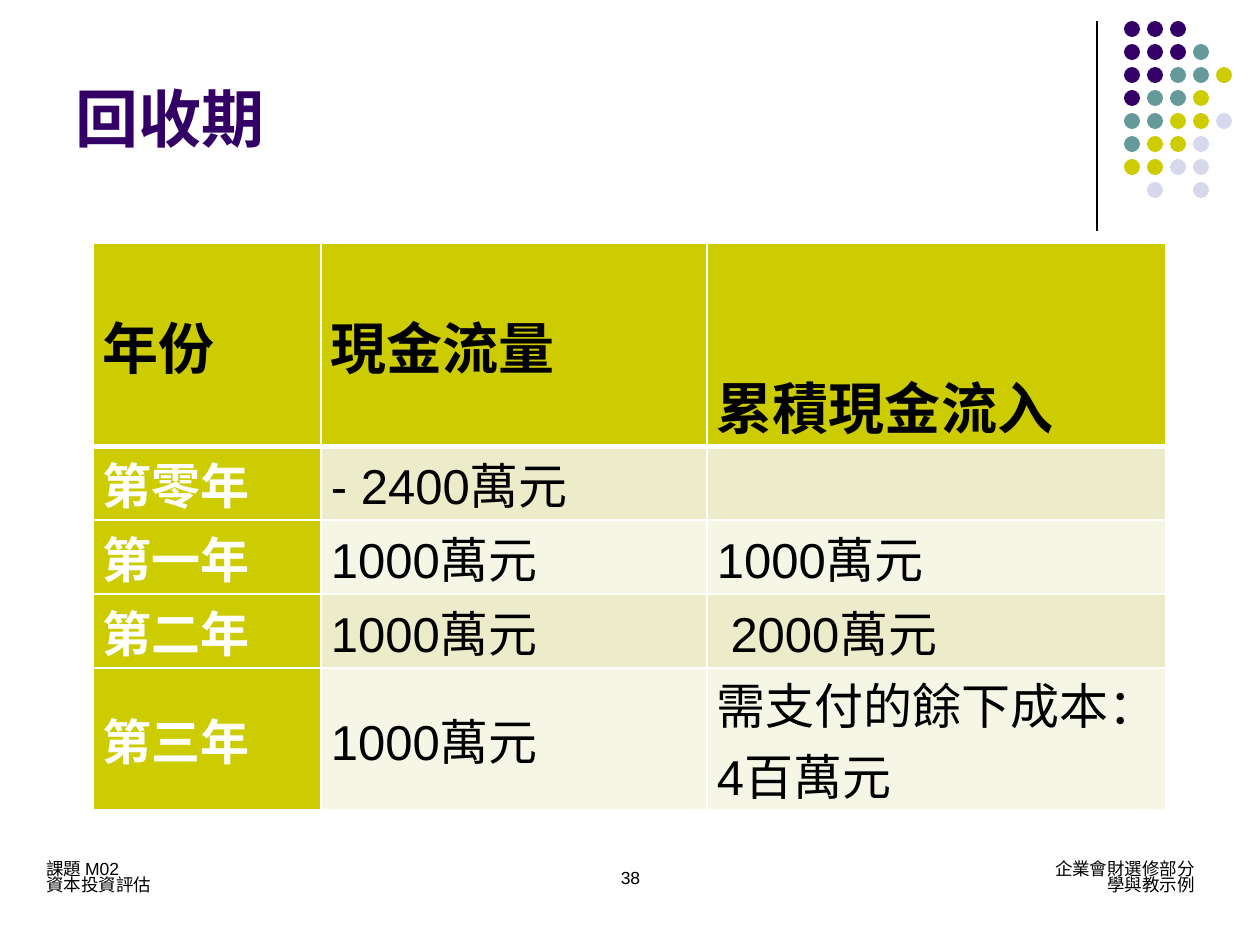
from dataclasses import dataclass

from lxml.etree import SubElement
from pptx import Presentation
from pptx.dml.color import RGBColor
from pptx.enum.shapes import MSO_CONNECTOR, MSO_SHAPE
from pptx.enum.text import MSO_ANCHOR, PP_ALIGN
from pptx.oxml.ns import qn
from pptx.util import Pt


@dataclass(frozen=True)
class Theme:
    font: str = "Arial"
    black: str = "000000"
    white: str = "FFFFFF"
    purple: str = "330066"
    teal: str = "669999"
    olive: str = "CCCC00"
    lilac: str = "D8D8EC"
    band: str = "ECECCB"
    pale: str = "F6F6E7"
    title: int = 36
    head: int = 32
    body: int = 28
    small: int = 10


theme = Theme()
rgb = RGBColor.from_string


def px(*sizes):
    """Turn px lengths into EMU, at 126 px to the inch."""
    return [round(size * 914400 / 126) for size in sizes]


def write(frame, lines, size, color, bold=False, align=PP_ALIGN.LEFT, space=None):
    frame.word_wrap = True
    for i, line in enumerate(lines):
        para = frame.add_paragraph() if i else frame.paragraphs[0]
        para.alignment = align
        para.line_spacing = space
        run = para.add_run()
        run.text = line
        run.font.name = theme.font
        run.font.size = Pt(size)
        run.font.bold = bold
        run.font.color.rgb = rgb(color)


deck = Presentation()
deck.slide_width, deck.slide_height = px(1260, 945)
slide = deck.slides.add_slide(deck.slide_layouts[5])
shapes = slide.shapes

# Corner rule and dots
rule = shapes.add_connector(MSO_CONNECTOR.STRAIGHT, *px(1097, 21, 1097, 231))
rule.line.color.rgb = rgb(theme.black)
rule.line.width = Pt(0.75)
SubElement(rule._element.spPr, qn("a:effectLst"))

inks = {"P": theme.purple, "T": theme.teal, "O": theme.olive, "L": theme.lilac}
dots = ["PPP", "PPPT", "PPTTO", "PTTO", "TTOOL", "TOOL", "OOLL", ".L.L"]
group = shapes.add_group_shape()
for row, marks in enumerate(dots):
    for col, mark in enumerate(marks):
        if mark in inks:
            spot = px(1124 + 23 * col, 21 + 23 * row, 16, 16)
            dot = group.shapes.add_shape(MSO_SHAPE.OVAL, *spot)
            dot.shadow.inherit = False
            dot.fill.solid()
            dot.fill.fore_color.rgb = rgb(inks[mark])
            dot.line.fill.background()

# Title
title = shapes.title
title.left, title.top, title.width, title.height = px(63, 16, 1040, 145)
title.text_frame.vertical_anchor = MSO_ANCHOR.BOTTOM
write(title.text_frame, ["回收期"], theme.title, theme.purple, bold=True)

# Cash flow table
data = [
    ["年份", "現金流量", "累積現金流入"],
    ["第零年", "- 2400萬元", ""],
    ["第一年", "1000萬元", "1000萬元"],
    ["第二年", "1000萬元", " 2000萬元"],
    ["第三年", "1000萬元", "需支付的餘下成本：4百萬元"],
]
widths = px(228, 386, 459)
heights = px(202, 74, 74, 74, 117)
frame = shapes.add_table(5, 3, *px(93, 243), sum(widths), sum(heights))
table = frame.table
table.first_col = True
table.horz_banding = False
for col, width in zip(table.columns, widths):
    col.width = width
for row, height in zip(table.rows, heights):
    row.height = height

pad = px(10)[0]
for r, texts in enumerate(data):
    for c, text in enumerate(texts):
        cell = table.cell(r, c)
        cell.margin_left = cell.margin_right = pad
        cell.margin_top = cell.margin_bottom = 0
        top = c == 2 and r in (0, 4)
        cell.vertical_anchor = MSO_ANCHOR.TOP if top else MSO_ANCHOR.MIDDLE

        props = cell._tc.get_or_add_tcPr()
        for side in "LRTB":
            thick = (r, side) in [(0, "B"), (1, "T")]
            edge = SubElement(props, qn(f"a:ln{side}"), w=str(Pt(3 if thick else 1)))
            fill = SubElement(edge, qn("a:solidFill"))
            SubElement(fill, qn("a:srgbClr"), val=theme.white)

        key = r == 0 or c == 0
        cell.fill.solid()
        shade = theme.olive if key else theme.band if r % 2 else theme.pale
        cell.fill.fore_color.rgb = rgb(shade)
        if text:
            size = theme.body if r else theme.head
            color = theme.white if r and c == 0 else theme.black
            space = 2.5 if (r, c) == (0, 2) else None
            write(cell.text_frame, [text], size, color, bold=key, space=space)

# Footer
notes = [
    ((34, 857, 256, 44), ["課題 M02", "資本投資評估"], PP_ALIGN.LEFT, 0.75),
    ((927, 857, 280, 44), ["企業會財選修部分", "學與教示例"], PP_ALIGN.RIGHT, 0.75),
    ((431, 861, 399, 63), ["38"], PP_ALIGN.CENTER, None),
]
for spot, lines, align, space in notes:
    box = shapes.add_textbox(*px(*spot))
    write(box.text_frame, lines, theme.small, theme.black, align=align, space=space)

deck.save("out.pptx")
